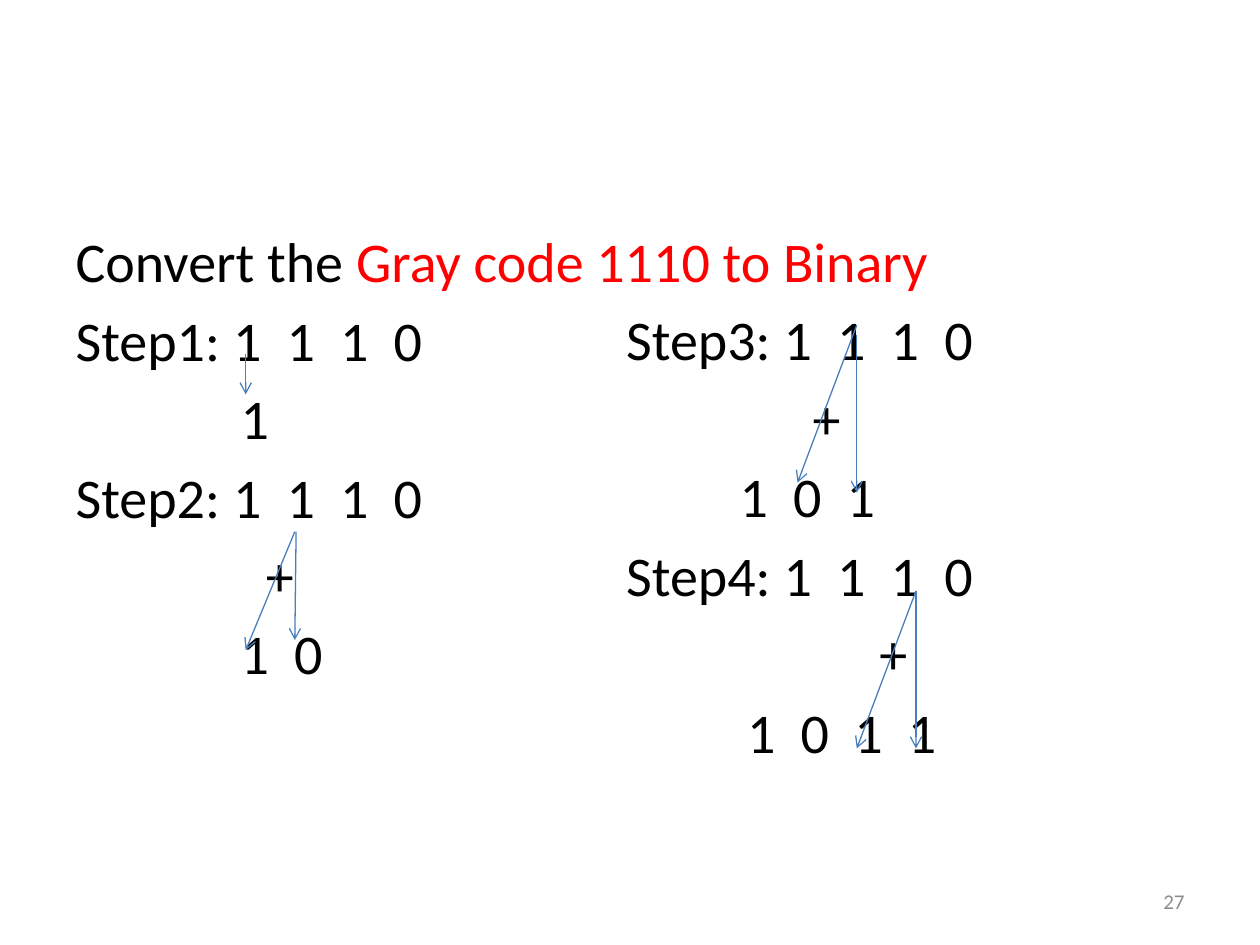
"""Build the slide that converts Gray code 1110 to binary in four steps."""
from dataclasses import dataclass

from pptx import Presentation
from pptx.dml.color import RGBColor as Rgb
from pptx.enum.shapes import MSO_CONNECTOR as Connector
from pptx.enum.text import MSO_ANCHOR as Anchor, PP_ALIGN as Align
from pptx.oxml.ns import qn
from pptx.util import Inches, Pt
from lxml.etree import SubElement

COLORS = {"ink": "000000", "accent": "FF0000", "arrow": "4B7EBC", "number": "8C8C8C"}
DIGIT_SPACING = 3.6


@dataclass(frozen=True)
class Span:
    text: str
    color: str = "ink"
    spacing: float = 0


@dataclass(frozen=True)
class Row:
    spans: tuple[Span, ...]
    indent: float = 0


@dataclass(frozen=True)
class Arrow:
    start: tuple[float, float]
    end: tuple[float, float]


def digits(code: str) -> Span:
    """Spread the digits of a code."""
    return Span(" ".join(code), spacing=DIGIT_SPACING)


def step(number: int) -> Row:
    """Label a step and follow it with the Gray code."""
    return Row((Span(f"Step{number}: "), digits("1110")))


LEFT_PLACE = {"left": 0.5, "top": 1.75, "width": 9, "height": 4.95}
LEFT_ROWS = [
    Row((Span("Convert the "), Span("Gray code 1110 to Binary", "accent"))),
    step(1),
    Row((digits("1"),), 1.31),
    step(2),
    Row((Span("+"),), 1.51),
    Row((digits("10"),), 1.31),
]

RIGHT_PLACE = {"left": 4.87, "top": 2.37, "width": 4.63, "height": 4.33}
RIGHT_ROWS = [
    step(3),
    Row((Span("+"),), 1.48),
    Row((digits("101"),), 0.9),
    step(4),
    Row((Span("+"),), 2.01),
    Row((digits("1011"),), 0.96),
]

ARROWS = [
    Arrow((1.95, 2.81), (1.95, 3.13)),
    Arrow((2.35, 4.22), (2.34, 5.08)),
    Arrow((2.34, 4.22), (1.95, 5.16)),
    Arrow((6.8, 2.58), (6.33, 3.83)),
    Arrow((6.8, 2.66), (6.8, 3.91)),
    Arrow((7.27, 4.69), (6.8, 5.94)),
    Arrow((7.27, 4.69), (7.27, 5.94)),
]


def add_run(paragraph, span: Span, size: float) -> None:
    """Append a formatted span to a paragraph."""
    run = paragraph.add_run()
    run.text = span.text
    for name, value in {"name": "Calibri", "size": Pt(size)}.items():
        setattr(run.font, name, value)
    run.font.color.rgb = Rgb.from_string(COLORS[span.color])
    if span.spacing:
        run._r.get_or_add_rPr().set("spc", str(round(span.spacing * 100)))


def fill_column(body, place: dict[str, float], rows: list[Row]) -> None:
    """Move a body placeholder and write its indented rows."""
    for name, value in place.items():
        setattr(body, name, Inches(value))
    frame = body.text_frame
    for index, row in enumerate(rows):
        paragraph = frame.add_paragraph() if index else frame.paragraphs[0]
        properties = paragraph._p.get_or_add_pPr()
        for name, value in {"marL": Inches(row.indent), "indent": 0}.items():
            properties.set(name, str(int(value)))
        SubElement(properties, qn("a:buNone"))
        for span in row.spans:
            add_run(paragraph, span, 32)


def add_arrow(slide, arrow: Arrow) -> None:
    """Draw a thin line with an open arrowhead at its end."""
    points = [Inches(value) for value in arrow.start + arrow.end]
    connector = slide.shapes.add_connector(Connector.STRAIGHT, *points)
    connector.line.color.rgb = Rgb.from_string(COLORS["arrow"])
    connector.line.width = Pt(0.75)
    SubElement(connector.line._get_or_add_ln(), qn("a:tailEnd"), type="arrow")
    SubElement(connector._element.spPr, qn("a:effectLst"))


def add_page_number(slide, number: str) -> None:
    """Write the page number at the lower right."""
    box = slide.shapes.add_textbox(Inches(7.17), Inches(6.95), Inches(2.33), Inches(0.4))
    frame = box.text_frame
    for name, value in {"word_wrap": True, "vertical_anchor": Anchor.MIDDLE}.items():
        setattr(frame, name, value)
    paragraph = frame.paragraphs[0]
    paragraph.alignment = Align.RIGHT
    add_run(paragraph, Span(number, "number"), 12)


def main() -> None:
    """Build and save the slide."""
    deck = Presentation()
    deck.slide_width, deck.slide_height = Inches(10), Inches(7.5)
    slide = deck.slides.add_slide(deck.slide_layouts[3])
    title = slide.shapes.title._element
    title.getparent().remove(title)

    fill_column(slide.placeholders[1], LEFT_PLACE, LEFT_ROWS)
    fill_column(slide.placeholders[2], RIGHT_PLACE, RIGHT_ROWS)
    for arrow in ARROWS:
        add_arrow(slide, arrow)
    add_page_number(slide, "27")
    deck.save("out.pptx")


if __name__ == "__main__":
    main()
